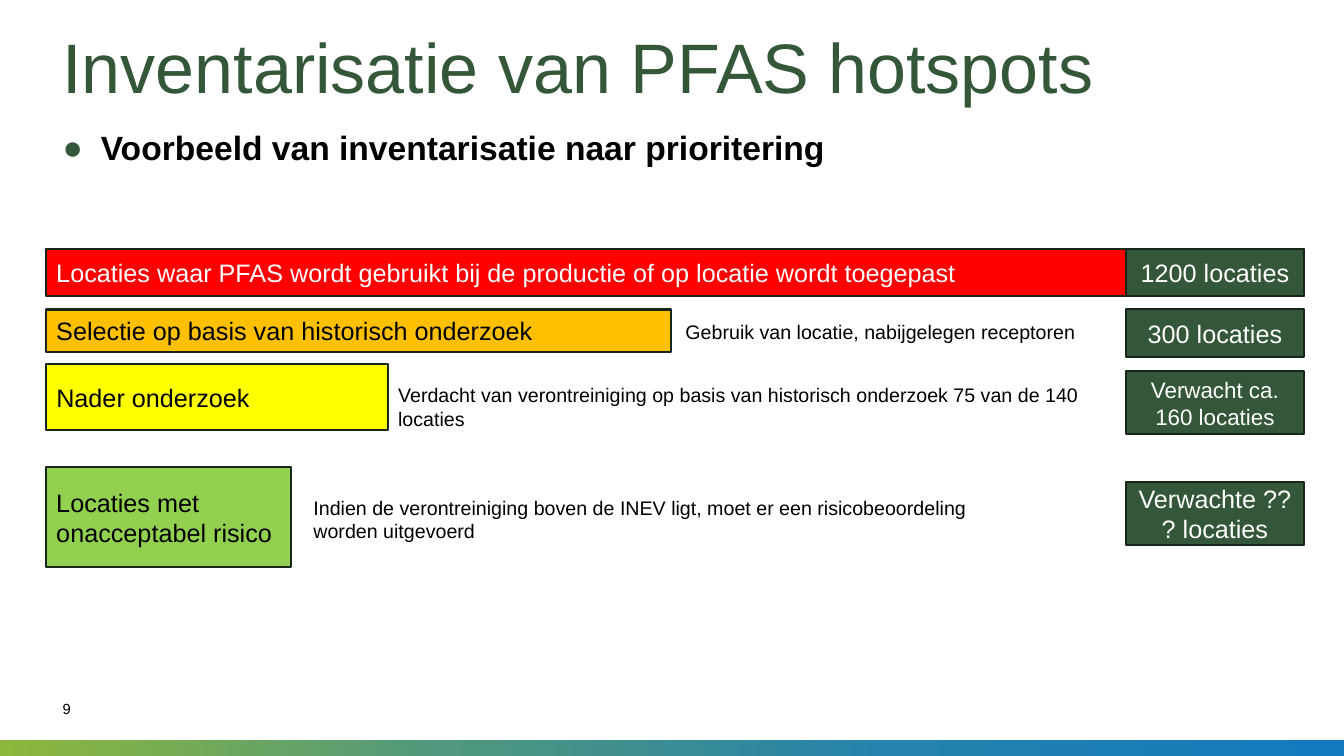
from lxml.etree import SubElement
from pptx import Presentation
from pptx.dml.color import RGBColor
from pptx.enum.shapes import MSO_SHAPE
from pptx.enum.text import MSO_ANCHOR, PP_ALIGN
from pptx.oxml.ns import qn
from pptx.util import Inches, Pt

WIDTH, HEIGHT = 13.33, 7.5
LEFT_MARGIN, TEXT_WIDTH = 0.62, 12.08
STAGE_LEFT = 0.46
COUNT_LEFT, COUNT_WIDTH = 11.17, 1.76

WHITE = RGBColor(0xFF, 0xFF, 0xFF)
BLACK = RGBColor(0x00, 0x00, 0x00)
GREEN = RGBColor(0x34, 0x57, 0x3A)
OUTLINE = RGBColor(0x17, 0x26, 0x19)
RED = RGBColor(0xFF, 0x00, 0x00)
ORANGE = RGBColor(0xFF, 0xC0, 0x00)
YELLOW = RGBColor(0xFF, 0xFF, 0x00)
LIME = RGBColor(0x92, 0xD0, 0x50)
FOOTER_STOPS = [
    (0, RGBColor(0x8E, 0xB8, 0x3C)),
    (33, RGBColor(0x50, 0x98, 0x7D)),
    (66, RGBColor(0x24, 0x82, 0xAC)),
    (100, RGBColor(0x14, 0x7A, 0xBF)),
]

# Per stage: (label, fill, text colour, top, width, height),
# (note, left, top, width, height), (count, size, top, height)
STAGES = [
    (("Locaties waar PFAS wordt gebruikt bij de productie of op locatie wordt toegepast",
      RED, WHITE, 2.47, 12.47, 0.47),
     None,
     ("1200 locaties", 18, 2.47, 0.47)),
    (("Selectie op basis van historisch onderzoek", ORANGE, BLACK, 3.07, 6.2, 0.42),
     ("Gebruik van locatie, nabijgelegen receptoren", 6.7, 3.12, 4.29, 0.34),
     ("300 locaties", 18, 3.07, 0.47)),
    (("Nader onderzoek", YELLOW, BLACK, 3.61, 3.39, 0.66),
     ("Verdacht van verontreiniging op basis van historisch onderzoek 75 van de 140 locaties",
      3.85, 3.75, 7.32, 0.57),
     ("Verwacht ca. 160 locaties", 16, 3.68, 0.63)),
    (("Locaties met onacceptabel risico", LIME, BLACK, 4.63, 2.43, 1),
     ("Indien de verontreiniging boven de INEV ligt, moet er een risicobeoordeling "
      "worden uitgevoerd", 3.01, 4.87, 7.32, 0.57),
     ("Verwachte ??? locaties", 18, 4.78, 0.63)),
]


def write(paragraph, wording, size, color, bold=False):
    run = paragraph.add_run()
    run.text = wording
    run.font.name = "Arial"
    run.font.size = Pt(size)
    run.font.bold = bold
    run.font.color.rgb = color


def add_label(slide, box, wording, size, color, inset=True, spacing=None, bold=False):
    """Add unframed text and return its text frame."""
    frame = slide.shapes.add_textbox(*map(Inches, box)).text_frame
    frame.word_wrap = True
    if not inset:
        frame.margin_left = frame.margin_right = 0
        frame.margin_top = frame.margin_bottom = 0
    paragraph = frame.paragraphs[0]
    if spacing:
        paragraph.line_spacing = Pt(spacing)
    write(paragraph, wording, size, color, bold)
    return frame


def add_bar(slide, box, wording, fill, size, color, align):
    """Add an outlined rectangle with vertically centred text."""
    bar = slide.shapes.add_shape(MSO_SHAPE.RECTANGLE, *map(Inches, box))
    bar.shadow.inherit = False
    bar.fill.solid()
    bar.fill.fore_color.rgb = fill
    bar.line.color.rgb = OUTLINE
    bar.line.width = Pt(1.5)
    frame = bar.text_frame
    frame.word_wrap = True
    frame.vertical_anchor = MSO_ANCHOR.MIDDLE
    frame.paragraphs[0].alignment = align
    write(frame.paragraphs[0], wording, size, color)


def add_footer(slide, box):
    band = slide.shapes.add_shape(MSO_SHAPE.RECTANGLE, *map(Inches, box))
    band.shadow.inherit = False
    band.line.fill.background()
    band.fill.gradient()
    band.fill.gradient_angle = 0
    stops = next(band.fill._xPr.iter(qn("a:gsLst")))
    for stop in list(stops):
        stops.remove(stop)
    for percent, color in FOOTER_STOPS:
        stop = SubElement(stops, qn("a:gs"), pos=str(percent * 1000))
        SubElement(stop, qn("a:srgbClr"), val=str(color))


def add_bullet(paragraph, indent):
    properties = paragraph._p.get_or_add_pPr()
    properties.set("marL", str(Inches(indent)))
    properties.set("indent", str(-Inches(indent)))
    bullet_color = SubElement(properties, qn("a:buClr"))
    SubElement(bullet_color, qn("a:srgbClr"), val=str(GREEN))
    SubElement(properties, qn("a:buFont"), typeface="Arial")
    SubElement(properties, qn("a:buChar"), char="●")


def add_heading(slide):
    add_label(slide, (LEFT_MARGIN, 0.37, TEXT_WIDTH, 0.54),
              "Inventarisatie van PFAS hotspots", 50, GREEN, inset=False, spacing=50)
    subtitle = add_label(slide, (LEFT_MARGIN, 1.33, TEXT_WIDTH, 0.5),
                         "Voorbeeld van inventarisatie naar prioritering", 24, BLACK,
                         inset=False, spacing=24, bold=True)
    add_bullet(subtitle.paragraphs[0], 0.38)


def add_stage(slide, stage, note, count):
    label, fill, color, top, width, height = stage
    add_bar(slide, (STAGE_LEFT, top, width, height), label, fill, 18, color, PP_ALIGN.LEFT)
    if note:
        wording, *box = note
        add_label(slide, box, wording, 14, BLACK)
    wording, size, top, height = count
    add_bar(slide, (COUNT_LEFT, top, COUNT_WIDTH, height), wording, GREEN, size, WHITE,
            PP_ALIGN.CENTER)


def main():
    presentation = Presentation()
    presentation.slide_width = Inches(WIDTH)
    presentation.slide_height = Inches(HEIGHT)
    slide = presentation.slides.add_slide(presentation.slide_layouts[6])
    add_footer(slide, (0, 7.34, WIDTH, HEIGHT - 7.34))
    add_heading(slide)
    page_number = add_label(slide, (LEFT_MARGIN, 6.92, 0.39, 0.2), "9", 10.5, BLACK,
                            inset=False, spacing=10)
    page_number.vertical_anchor = MSO_ANCHOR.BOTTOM
    for stage in STAGES:
        add_stage(slide, *stage)
    presentation.save("out.pptx")


if __name__ == "__main__":
    main()
